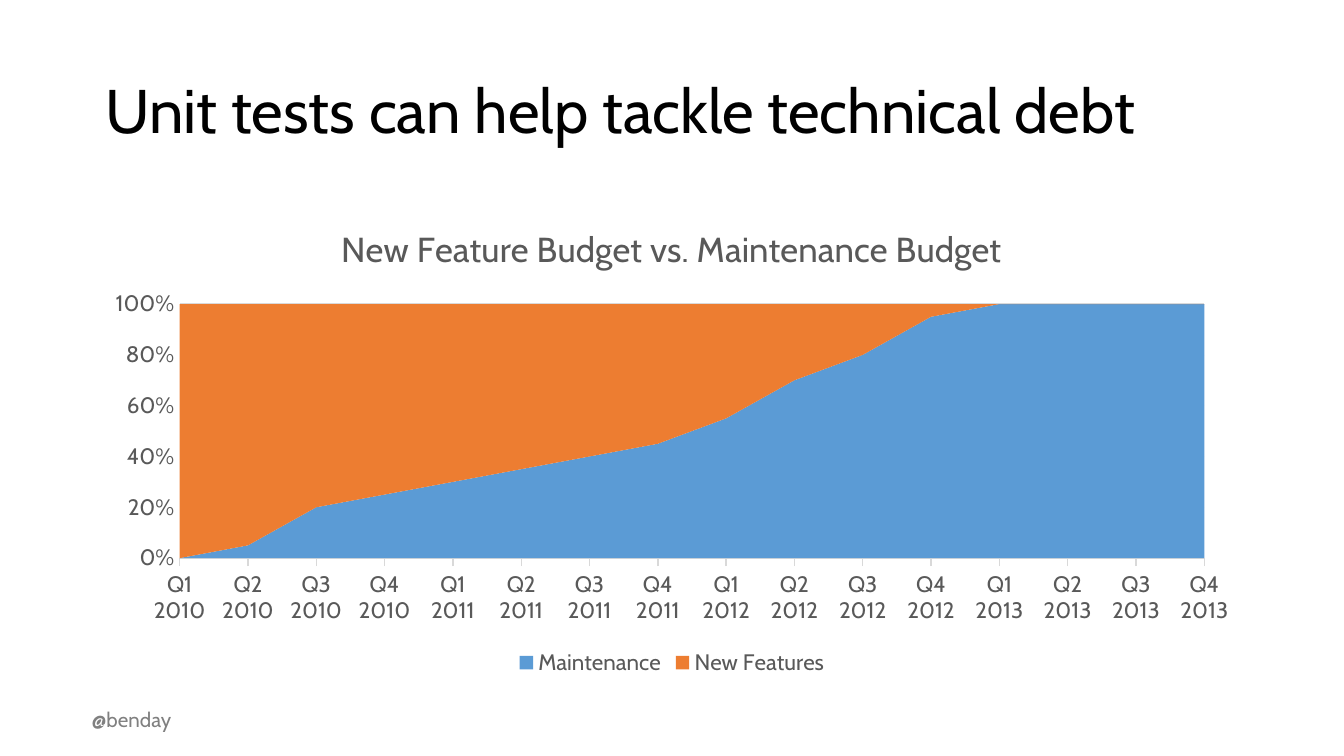
from pptx import Presentation
from pptx.chart.data import CategoryChartData
from pptx.dml.color import RGBColor
from pptx.enum.chart import XL_CHART_TYPE as ChartType
from pptx.enum.chart import XL_LEGEND_POSITION as LegendPosition
from pptx.enum.chart import XL_TICK_MARK as TickMark
from pptx.enum.text import MSO_ANCHOR as Anchor
from pptx.enum.text import PP_ALIGN as Align
from pptx.util import Pt

FONT = "Cabin"
COLORS = {
    "title": "000000",
    "handle": "808080",
    "chart text": "595959",
    "grid": "D9D9D9",
    "Maintenance": "5B9BD5",
    "New Features": "ED7D31",
}
LEFT, WIDTH = Pt(49.5), Pt(621)


def color(name):
    return RGBColor.from_string(COLORS[name])


def format_font(font, size, color_name):
    font.name = FONT
    font.size = Pt(size)
    font.bold = False
    font.color.rgb = color(color_name)


presentation = Presentation()
presentation.slide_width = Pt(720)
presentation.slide_height = Pt(405)
slide = presentation.slides.add_slide(presentation.slide_layouts[5])

# Title
title = slide.shapes.title
title.left, title.top, title.width, title.height = LEFT, Pt(21.5), WIDTH, Pt(78.5)
title.text_frame.text = "Unit tests can help tackle technical debt"
title.text_frame.vertical_anchor = Anchor.MIDDLE
paragraph = title.text_frame.paragraphs[0]
paragraph.alignment = Align.LEFT
paragraph.line_spacing = 0.9
format_font(paragraph.runs[0].font, 33, "title")

# Budget chart: the two shares always add up to 100
maintenance = [0, 5, 20, 25, 30, 35, 40, 45, 55, 70, 80, 95, 100, 100, 100, 100]
chart_data = CategoryChartData()
chart_data.categories = [
    f"Q{quarter} {year}" for year in range(2010, 2014) for quarter in range(1, 5)
]
chart_data.add_series("Maintenance", maintenance)
chart_data.add_series("New Features", [100 - share for share in maintenance])
chart = slide.shapes.add_chart(
    ChartType.AREA_STACKED_100, LEFT, Pt(108), WIDTH, Pt(257), chart_data
).chart
format_font(chart.font, 12, "chart text")

chart.has_title = True
chart.chart_title.include_in_layout = False
chart_title = chart.chart_title.text_frame
chart_title.text = "New Feature Budget vs. Maintenance Budget"
format_font(chart_title.paragraphs[0].runs[0].font, 18.6, "chart text")

chart.has_legend = True
chart.legend.position = LegendPosition.BOTTOM
chart.legend.include_in_layout = False
format_font(chart.legend.font, 12, "chart text")

for series in chart.plots[0].series:
    series.format.fill.solid()
    series.format.fill.fore_color.rgb = color(series.name)

category_axis, value_axis = chart.category_axis, chart.value_axis
for axis in (category_axis, value_axis):
    axis.minor_tick_mark = TickMark.NONE
    format_font(axis.tick_labels.font, 12, "chart text")
category_axis.major_tick_mark = TickMark.OUTSIDE
value_axis.major_tick_mark = TickMark.NONE
value_axis.format.line.fill.background()
value_axis.maximum_scale = 1
value_axis.major_unit = 0.2
value_axis.tick_labels.number_format = "0%"
value_axis.tick_labels.number_format_is_linked = False
value_axis.has_major_gridlines = True
for line in (category_axis.format.line, value_axis.major_gridlines.format.line):
    line.color.rgb = color("grid")
    line.width = Pt(0.75)

# Handle at the foot of the slide
handle = slide.shapes.add_textbox(Pt(42), Pt(375), Pt(61), Pt(21))
handle.text_frame.word_wrap = False
handle.text_frame.text = "@benday"
format_font(handle.text_frame.paragraphs[0].runs[0].font, 11, "handle")

presentation.save("out.pptx")
